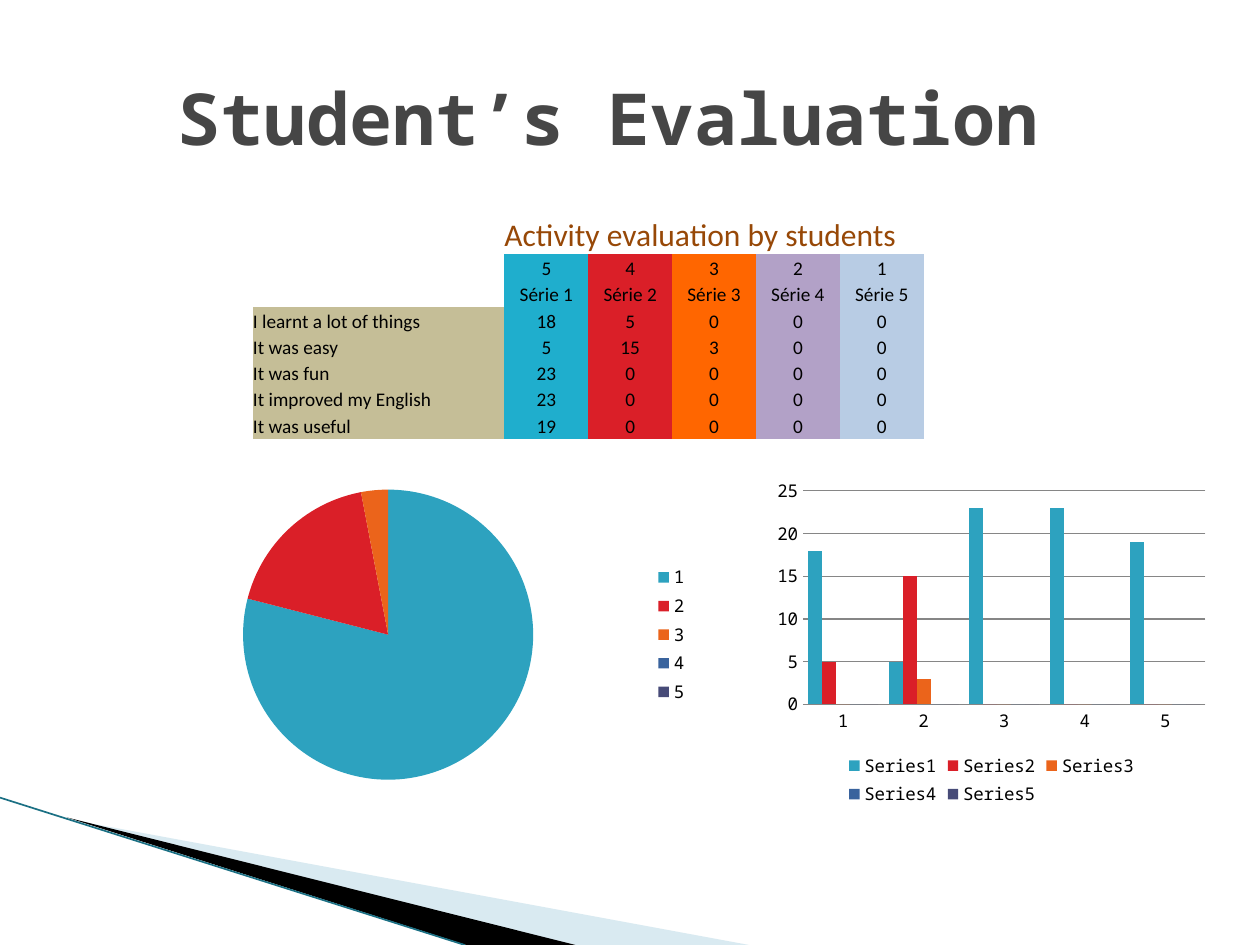
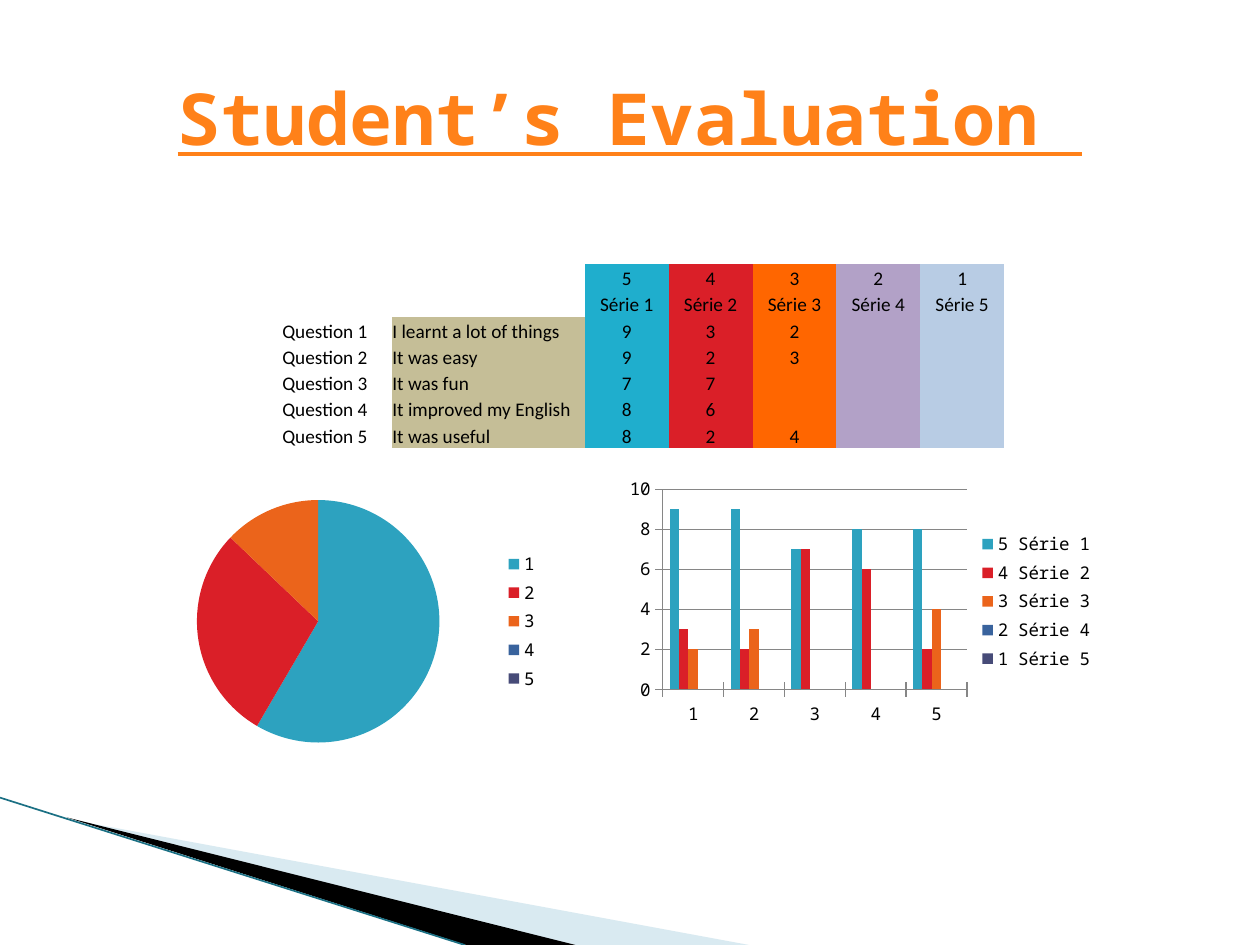
from collections import namedtuple
from dataclasses import dataclass

from lxml import etree
from pptx import Presentation
from pptx.chart.data import CategoryChartData
from pptx.dml.color import RGBColor
from pptx.enum.chart import XL_CHART_TYPE, XL_LEGEND_POSITION, XL_TICK_MARK
from pptx.enum.shapes import MSO_CONNECTOR
from pptx.enum.text import MSO_ANCHOR, PP_ALIGN
from pptx.oxml.ns import qn
from pptx.util import Cm, Pt

COLUMNS, PIE = XL_CHART_TYPE.COLUMN_CLUSTERED, XL_CHART_TYPE.PIE
RIGHT, BOTTOM = XL_LEGEND_POSITION.RIGHT, XL_LEGEND_POSITION.BOTTOM
NO_TICK, CROSS_TICK = XL_TICK_MARK.NONE, XL_TICK_MARK.CROSS
MIDDLE, LOW = MSO_ANCHOR.MIDDLE, MSO_ANCHOR.BOTTOM
LEFT, CENTER = PP_ALIGN.LEFT, PP_ALIGN.CENTER
STRAIGHT = MSO_CONNECTOR.STRAIGHT
NO_GRID_STYLE = "{2D5ABB26-0587-4C30-8999-92F81FD0307C}"

Box = namedtuple("Box", "x y w h")


@dataclass(frozen=True)
class Theme:
    mono: str = "Noto Sans Mono"
    sans: str = "Calibri"
    title_size: int = 41
    caption_size: int = 18
    table_size: int = 11
    chart_size: int = 10
    title: str = "464646"
    title_accent: str = "FF8119"
    text: str = "000000"
    caption: str = "974807"
    label_fill: str = "C5BE97"
    score_fills: tuple = ("1FAECD", "DA1F28", "FF6600", "B2A1C7", "B8CCE4")
    series: tuple = ("2DA2BF", "DA1F28", "EB641B", "39639D", "474B78")
    grid: str = "868686"
    pale_wedge: str = "A0CBDC"
    dark_wedge: str = "000000"
    edge: str = "1B7084"


THEME = Theme()
STATEMENTS = ("I learnt a lot of things", "It was easy", "It was fun",
              "It improved my English", "It was useful")
GRADES = (5, 4, 3, 2, 1)
SERIES_LABELS = [f"Série {n}" for n in range(1, 6)]
CATEGORIES = ("1", "2", "3", "4", "5")
LABEL_SPAN = 3
COL_W, ROW_H = 1.69, 0.53

# One row per statement, one column per grade
FIRST_SCORES = ((18, 5, 0, 0, 0), (5, 15, 3, 0, 0), (23, 0, 0, 0, 0),
                (23, 0, 0, 0, 0), (19, 0, 0, 0, 0))
SECOND_SCORES = ((9, 3, 2, None, None), (9, 2, 3, None, None),
                 (7, 7, None, None, None), (8, 6, None, None, None),
                 (8, 2, 4, None, None))


def rgb(code):
    return RGBColor.from_string(code)


def set_all(obj, **values):
    for name, value in values.items():
        setattr(obj, name, value)


def set_font(font, name, size, color, **extra):
    set_all(font, name=name, size=Pt(size), **extra)
    font.color.rgb = rgb(color)


def set_solid(fill, color):
    fill.solid()
    fill.fore_color.rgb = rgb(color)


def add_wedge(slide, points, color, opacity=None):
    (x, y), *rest = [(Cm(x), Cm(y)) for x, y in points]
    builder = slide.shapes.build_freeform(x, y)
    builder.add_line_segments(rest, close=True)
    sp = builder.convert_to_shape()
    sp.shadow.inherit = False
    sp.line.fill.background()
    set_solid(sp.fill, color)
    if opacity:
        clr = sp._element.spPr.find(qn("a:solidFill"))[0]
        etree.SubElement(clr, qn("a:alpha"), val=str(opacity * 1000))


def add_corner(slide):
    """Draw the wedges and the edge line at the lower left."""
    add_wedge(slide, ((1.4, 16.52), (15.1, 19.05), (11.58, 19.05)),
              THEME.pale_wedge, 40)
    add_wedge(slide, ((1.35, 16.48), (11.6, 19.05), (9.4, 19.05)),
              THEME.dark_wedge)
    edge = slide.shapes.add_connector(STRAIGHT, Cm(0), Cm(16.08),
                                      Cm(9.37), Cm(19.05))
    edge.line.color.rgb = rgb(THEME.edge)
    edge.line.width = Pt(0.95)
    etree.SubElement(edge._element.spPr, qn("a:effectLst"))


def add_title(slide, color, underline):
    title = slide.shapes.title
    set_all(title, left=Cm(1.27), top=Cm(0.76),
            width=Cm(22.86), height=Cm(3.18))
    tf = title.text_frame
    tf.vertical_anchor = MIDDLE
    p = tf.paragraphs[0]
    p.alignment = CENTER
    r = p.add_run()
    r.text = "Student’s Evaluation "
    set_font(r.font, THEME.mono, THEME.title_size, color,
             bold=True, underline=underline)


def format_cell(cell):
    set_all(cell, margin_left=0, margin_right=0, margin_top=0,
            margin_bottom=0, vertical_anchor=LOW)
    cell.fill.background()
    end = cell.text_frame.paragraphs[0]._p.get_or_add_endParaRPr()
    end.set("sz", str(THEME.table_size * 100))


def write_cell(cell, text, align=LEFT, size=THEME.table_size,
               color=THEME.text):
    p = cell.text_frame.paragraphs[0]
    p.alignment = align
    r = p.add_run()
    r.text = str(text)
    set_font(r.font, THEME.sans, size, color)


def add_grid(slide, x, y, widths, heights):
    """Add an unstyled table with the given column and row sizes in cm."""
    frame = slide.shapes.add_table(
        len(heights), len(widths), Cm(x), Cm(y),
        Cm(sum(widths)), Cm(sum(heights)))
    table = frame.table
    set_all(table, first_row=False, horz_banding=False)
    table._tbl.tblPr.find(qn("a:tableStyleId")).text = NO_GRID_STYLE
    for col, width in zip(table.columns, widths):
        col.width = Cm(width)
    for row, height in zip(table.rows, heights):
        row.height = Cm(height)
    for cell in table.iter_cells():
        format_cell(cell)
    return table


def add_scores(slide, x, y, widths, heights, scores, label_col, caption=None):
    """Add the score table; columns before label_col number the questions."""
    table = add_grid(slide, x, y, widths, heights)
    score_col = label_col + LABEL_SPAN
    if caption:
        cell = table.cell(0, score_col)
        cell.merge(table.cell(0, score_col + len(GRADES) - 1))
        write_cell(cell, caption, size=THEME.caption_size,
                   color=THEME.caption)
    for i, statement in enumerate(STATEMENTS):
        row = i + 3
        if label_col:
            write_cell(table.cell(row, 0), f"Question {i + 1}")
        label = table.cell(row, label_col)
        label.merge(table.cell(row, score_col - 1))
        set_solid(label.fill, THEME.label_fill)
        write_cell(label, statement)
    for i, values in enumerate((GRADES, SERIES_LABELS, *scores)):
        for j, value in enumerate(values):
            cell = table.cell(i + 1, score_col + j)
            set_solid(cell.fill, THEME.score_fills[j])
            if value is not None:
                write_cell(cell, value, CENTER)


def add_chart(slide, box, kind, series, legend_position):
    """Add a chart with the shared font and legend; series maps name to values."""
    data = CategoryChartData()
    data.categories = CATEGORIES
    for name, values in series.items():
        data.add_series(name, values)
    chart = slide.shapes.add_chart(kind, *map(Cm, box), data).chart
    set_all(chart, has_title=False, has_legend=True)
    set_all(chart.legend, position=legend_position, include_in_layout=False)
    set_font(chart.font, THEME.mono, THEME.chart_size, THEME.text)
    return chart


def add_share_pie(slide, box, shares):
    chart = add_chart(slide, box, PIE, {"Series 1": shares}, RIGHT)
    points = chart.plots[0].series[0].points
    for i, color in enumerate(THEME.series):
        set_solid(points[i].format.fill, color)


def add_score_columns(slide, box, names, scores, legend_position,
                      top, step, gap, tick):
    chart = add_chart(slide, box, COLUMNS, dict(zip(names, zip(*scores))),
                      legend_position)
    plot = chart.plots[0]
    set_all(plot, gap_width=gap, overlap=0, vary_by_categories=False)
    for s, color in zip(plot.series, THEME.series):
        s.invert_if_negative = False
        set_solid(s.format.fill, color)
    value_axis = chart.value_axis
    set_all(value_axis, minimum_scale=0, maximum_scale=top, major_unit=step,
            has_major_gridlines=True)
    for axis in (chart.category_axis, value_axis):
        set_all(axis, major_tick_mark=tick, minor_tick_mark=NO_TICK)
        axis.format.line.color.rgb = rgb(THEME.grid)
    value_axis.major_gridlines.format.line.color.rgb = rgb(THEME.grid)
    if tick == NO_TICK:
        value_axis.format.line.fill.background()


def new_slide(prs, title_color, underline=False):
    slide = prs.slides.add_slide(prs.slide_layouts[5])
    add_corner(slide)
    add_title(slide, title_color, underline)
    return slide


def build_first_evaluation(prs):
    slide = new_slide(prs, THEME.title)
    add_score_columns(slide, Box(15.49, 9.52, 8.99, 6.83),
                      [f"Series{n}" for n in range(1, 6)], FIRST_SCORES,
                      BOTTOM, top=25, step=5, gap=75, tick=NO_TICK)
    add_scores(slide, 5.1, 4.32, [COL_W] * 9, [0.81] + [ROW_H] * 7,
               FIRST_SCORES, label_col=0,
               caption="Activity evaluation by students")
    add_share_pie(slide, Box(2.49, 9.52, 11.63, 6.55), (79, 18, 3, 0, 0))


def build_second_evaluation(prs):
    slide = new_slide(prs, THEME.title_accent, underline=True)
    widths = [2.22, COL_W, COL_W, 0.5] + [COL_W] * 5
    add_scores(slide, 5.69, 3.73, widths, [1.6] + [ROW_H] * 8,
               SECOND_SCORES, label_col=1)
    add_share_pie(slide, Box(2.69, 9.73, 8.41, 5.59), (59, 29, 13, 0, 0))
    names = [f"{g} {label}" for g, label in zip(GRADES, SERIES_LABELS)]
    add_score_columns(slide, Box(12.5, 9.52, 9.8, 5.21), names,
                      SECOND_SCORES, RIGHT, top=10, step=2, gap=150,
                      tick=CROSS_TICK)


def main():
    prs = Presentation()
    set_all(prs, slide_width=Cm(25.4), slide_height=Cm(19.05))
    build_first_evaluation(prs)
    build_second_evaluation(prs)
    prs.save("out.pptx")


if __name__ == "__main__":
    main()
